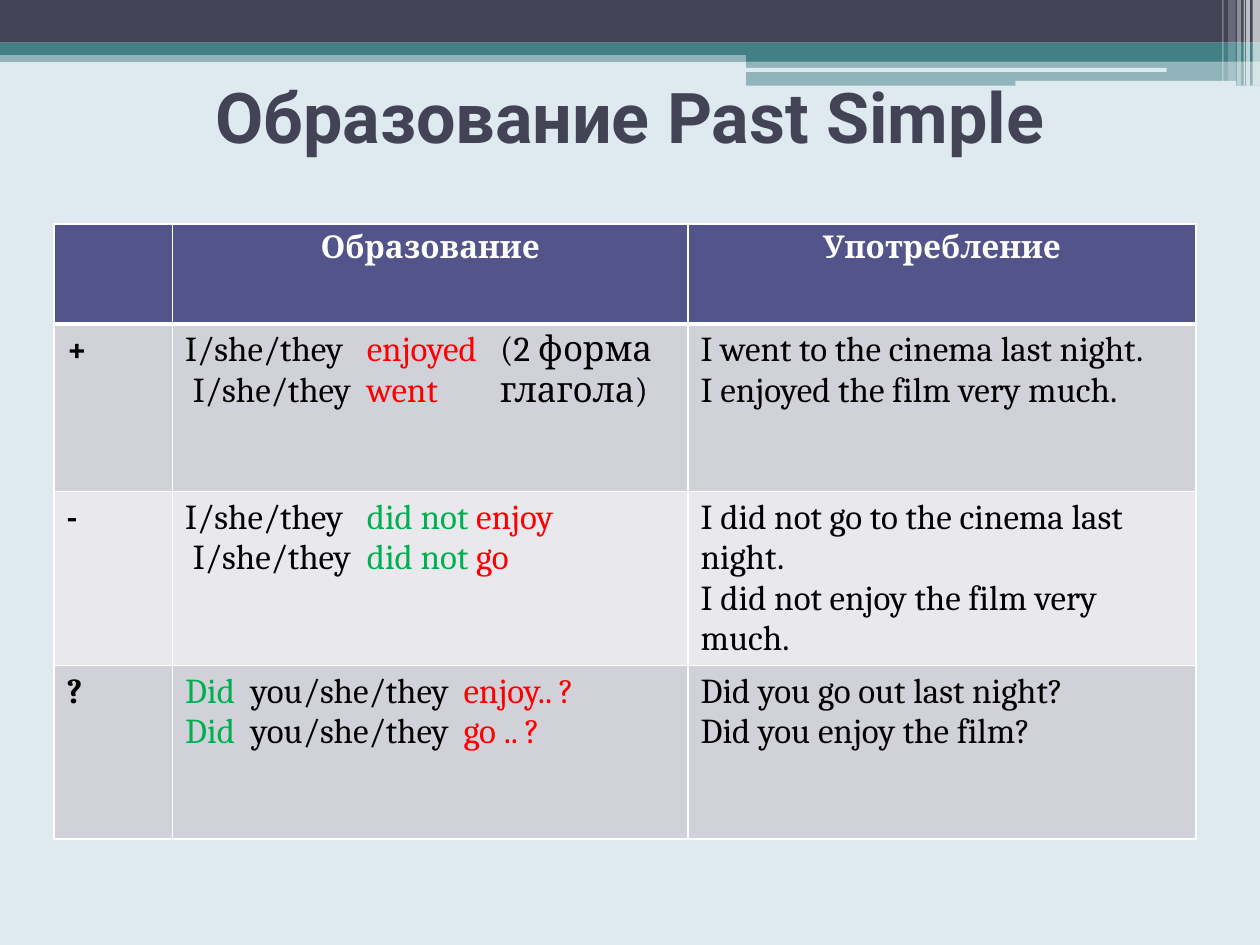
from lxml import etree
from pptx import Presentation
from pptx.dml.color import RGBColor
from pptx.enum.shapes import MSO_SHAPE as Shape
from pptx.enum.text import MSO_ANCHOR as Anchor, PP_ALIGN as Align
from pptx.oxml.ns import qn
from pptx.util import Cm, Pt

COLORS = {
    "background": "DEE9F0", "dark": "424456", "teal": "438086",
    "white": "FFFFFF", "black": "000000", "red": "FF0000", "green": "00B050",
    "header": "53548A", "band": "D1D1DA", "light_band": "E9E9ED",
}
TITLE_FONT, TABLE_FONT = "Roboto", "Cambria"

# Sentences are lists of (text, color) runs; tabs align the parts of a form.
HEADERS = ["", "Образование", "Употребление"]
ROWS = [
    ("+", [3.66, 6.35],
     [[("I/she/they\t", "black"), ("enjoyed\t", "red"), ("(2 форма", "black")],
      [(" I/she/they\t", "black"), ("went\t", "red"), ("глагола)", "black")]],
     ["I went to the cinema last night.", "I enjoyed the film very much."]),
    ("-", [3.66],
     [[("I/she/they\t", "black"), ("did not ", "green"), ("enjoy", "red")],
      [(" I/she/they\t", "black"), ("did not ", "green"), ("go", "red")]],
     ["I did not go to the cinema last night.",
      "I did not enjoy the film very much."]),
    ("?", [1.32, 5.61],
     [[("Did\t", "green"), ("you/she/they\t", "black"), ("enjoy.. ?", "red")],
      [("Did\t", "green"), ("you/she/they\t", "black"), ("go .. ?", "red")]],
     ["Did you go out last night?", "Did you enjoy the film?"]),
]


def color(name):
    return RGBColor.from_string(COLORS[name])


def add_run(paragraph, text, font, size, color_name, bold=False):
    run = paragraph.add_run()
    run.text = text
    run.font.name, run.font.size, run.font.bold = font, Pt(size), bold
    run.font.color.rgb = color(color_name)


def add_block(slide, box, fill, opacity=100, kind=Shape.RECTANGLE):
    shape = slide.shapes.add_shape(kind, *(Cm(length) for length in box))
    shape.shadow.inherit = False
    shape.line.fill.background()
    shape.fill.solid()
    shape.fill.fore_color.rgb = color(fill)
    if opacity < 100:
        tint = shape.fill._xPr.find(".//" + qn("a:srgbClr"))
        etree.SubElement(tint, qn("a:alpha"), val=str(opacity * 1000))


def add_top_band(slide, left, top, width):
    # Full-width stripes
    for offset, height, fill, opacity in [
            (1.02, 0.23, "teal", 50), (0, 0.86, "dark", 100),
            (0.86, 0.25, "teal", 100)]:
        add_block(slide, (left, top + offset, width, height), fill, opacity)
    # Stepped stripes on the right
    step = left + 15.04
    step_width = width - 15.04
    add_block(slide, (step, top + 0.99, step_width, 0.25), "teal")
    add_block(slide, (step, top + 1.22, step_width, 0.51), "teal", 50)
    for offset, drop, length, height in [
            (15.01, 1.37, 8.51, 0.08), (20.47, 1.63, 4.45, 0.1)]:
        add_block(slide, (left + offset, top + drop, length, height),
                  "background", kind=Shape.ROUNDED_RECTANGLE)
    # Translucent vertical bars in the corner
    for from_right, bar_width, height, opacity in [
            (0.15, 0.15, 1.73, 65), (0.28, 0.08, 1.73, 65),
            (0.33, 0.03, 1.73, 60), (0.46, 0.08, 1.73, 40),
            (0.64, 0.15, 1.63, 20), (0.76, 0.03, 1.63, 30)]:
        add_block(slide, (left + width - from_right, top, bar_width, height),
                  "white", opacity)


def place_title(slide, left, top, width, height):
    title = slide.shapes.title
    title.left, title.top = Cm(left), Cm(top)
    title.width, title.height = Cm(width), Cm(height)
    frame = title.text_frame
    frame.word_wrap = True
    frame.vertical_anchor = Anchor.MIDDLE
    paragraph = frame.paragraphs[0]
    paragraph.alignment = Align.CENTER
    add_run(paragraph, "Образование Past Simple", TITLE_FONT, 40, "dark", True)
    slide.shapes._spTree.append(title._element)  # in front of the band


def style_cell(cell, fill, top=1, bottom=1):
    properties = cell._tc.get_or_add_tcPr()
    for side, points in [("L", 1), ("R", 1), ("T", top), ("B", bottom)]:
        line = etree.SubElement(properties, qn("a:ln" + side),
                                w=str(Pt(points)))
        solid = etree.SubElement(line, qn("a:solidFill"))
        etree.SubElement(solid, qn("a:srgbClr"), val=COLORS["white"])
    cell.fill.solid()
    cell.fill.fore_color.rgb = color(fill)


def set_tabs(paragraph, stops):
    tabs = etree.SubElement(paragraph._p.get_or_add_pPr(), qn("a:tabLst"))
    for stop in stops:
        etree.SubElement(tabs, qn("a:tab"), pos=str(Cm(stop)), algn="l")


def fill_cell(cell, lines, size=20, bold=False, alignment=Align.LEFT, tabs=()):
    frame = cell.text_frame
    for index, runs in enumerate(lines):
        paragraph = frame.add_paragraph() if index else frame.paragraphs[0]
        paragraph.alignment = alignment
        if tabs:
            set_tabs(paragraph, tabs)
        for text, color_name in runs:
            add_run(paragraph, text, TABLE_FONT, size, color_name, bold)


def add_grammar_table(slide, left, top):
    widths, heights = [2.39, 10.39, 10.24], [2.01, 3.38, 3.5, 3.5]
    table = slide.shapes.add_table(
        len(heights), len(widths), Cm(left), Cm(top),
        Cm(sum(widths)), Cm(sum(heights))).table
    for column, width in zip(table.columns, widths):
        column.width = Cm(width)
    for row, height in zip(table.rows, heights):
        row.height = Cm(height)

    # Header row
    for column, text in enumerate(HEADERS):
        cell = table.cell(0, column)
        style_cell(cell, "header", bottom=3)
        if text:
            fill_cell(cell, [[(text, "white")]], 18, True, Align.CENTER)

    # One row for each sentence type
    for row, (sign, tabs, forms, examples) in enumerate(ROWS, start=1):
        cells = [table.cell(row, column) for column in range(len(widths))]
        for cell in cells:
            style_cell(cell, "band" if row % 2 else "light_band",
                       top=3 if row == 1 else 1)
        fill_cell(cells[0], [[(sign, "black")]], bold=True)
        fill_cell(cells[1], forms, tabs=tabs)
        fill_cell(cells[2], [[(text, "black")] for text in examples])


def main():
    presentation = Presentation()
    presentation.slide_width, presentation.slide_height = Cm(25.4), Cm(19.05)
    slide = presentation.slides.add_slide(presentation.slide_layouts[5])
    slide.background.fill.solid()
    slide.background.fill.fore_color.rgb = color("background")
    add_top_band(slide, 0, 0, 25.4)
    place_title(slide, 1.27, 0.53, 22.86, 3.61)
    add_grammar_table(slide, 1.09, 4.52)
    presentation.save("out.pptx")


if __name__ == "__main__":
    main()
